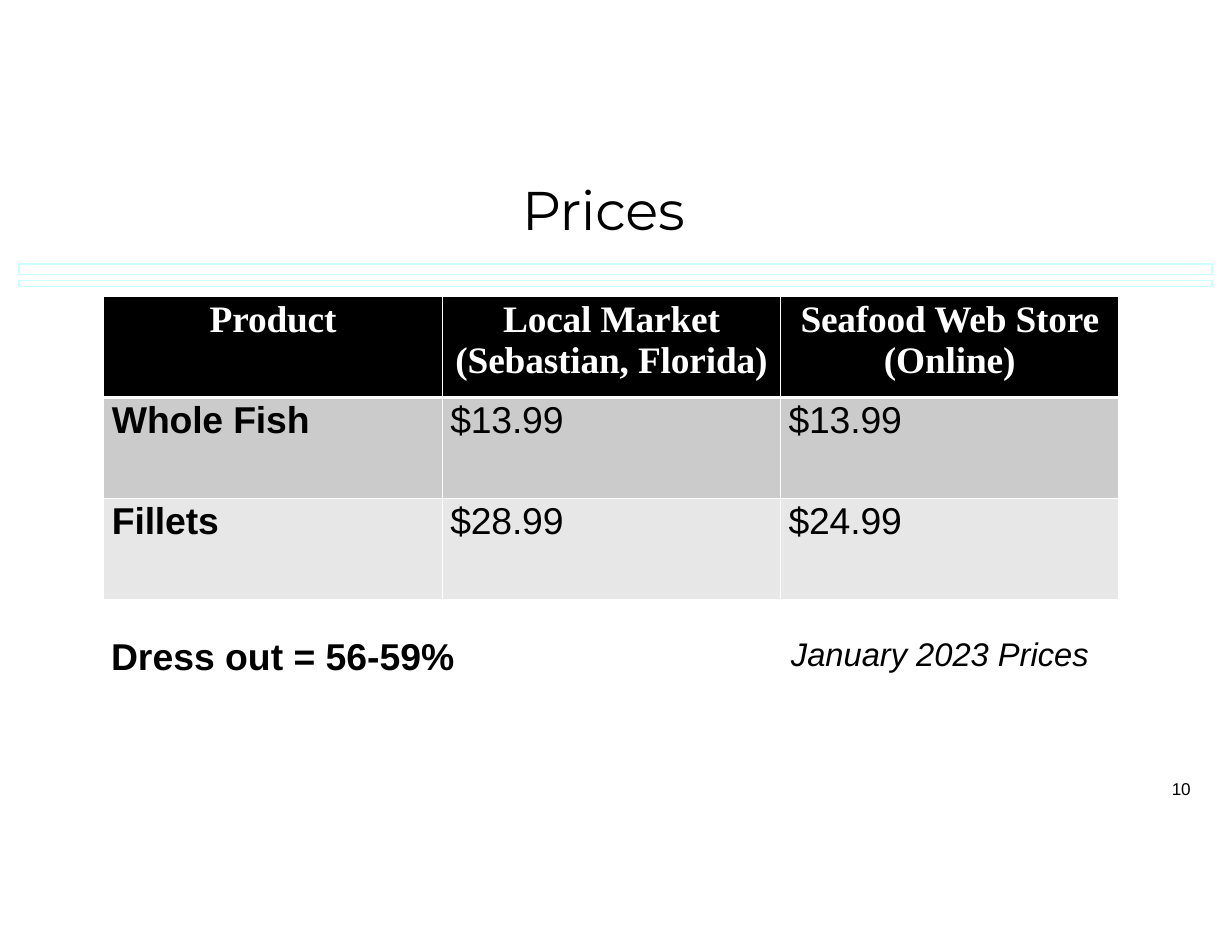
from dataclasses import dataclass

from lxml import etree
from pptx import Presentation
from pptx.dml.color import RGBColor
from pptx.enum.shapes import MSO_SHAPE
from pptx.enum.text import MSO_ANCHOR, MSO_AUTO_SIZE, PP_ALIGN
from pptx.oxml.ns import qn
from pptx.util import Pt

PX = 914400 // 112
RECT = MSO_SHAPE.RECTANGLE
TOP = MSO_ANCHOR.TOP
LEFT, CENTER = PP_ALIGN.LEFT, PP_ALIGN.CENTER
NO_FIT = MSO_AUTO_SIZE.NONE


@dataclass(frozen=True)
class Theme:
    ink: str = "000000"
    paper: str = "FFFFFF"
    rule: str = "CCFFFF"
    bands: tuple = ("CBCBCB", "E7E7E7")
    title_font: str = "Montserrat"
    head_font: str = "Times New Roman"
    body_font: str = "Arial"
    title_size: int = 35
    body_size: int = 24
    note_size: int = 21
    number_size: int = 11


T = Theme()
HEADERS = ["Product", "Local Market (Sebastian, Florida)", "Seafood Web Store (Online)"]
ROWS = [
    ["Whole Fish", "$13.99", "$13.99"],
    ["Fillets", "$28.99", "$24.99"],
]


def px(n):
    return n * PX


def rgb(value):
    return RGBColor.from_string(value)


def add_run(p, text, font, size, color=T.ink, bold=False, italic=False, spacing=0):
    r = p.add_run()
    r.text = text
    r.font.name, r.font.size = font, Pt(size)
    r.font.bold, r.font.italic = bold, italic
    r.font.color.rgb = rgb(color)
    if spacing:
        r.font._element.set("spc", str(round(spacing * 100)))


def setup_frame(tf, left=0, top=0):
    tf.word_wrap = True
    tf.auto_size = NO_FIT
    tf.vertical_anchor = TOP
    tf.margin_left, tf.margin_top = px(left), px(top)
    tf.margin_right = tf.margin_bottom = 0


def add_rules(s, x, y, w):
    """Thick and thin outlined bands under the title."""
    for dy, h in ((0, 11), (17, 6)):
        sp = s.shapes.add_shape(RECT, px(x), px(y + dy), px(w), px(h))
        sp.shadow.inherit = False
        sp.fill.background()
        sp.line.color.rgb = rgb(T.rule)
        sp.line.width = Pt(0.67)


def add_title(s, x, y, w, h):
    sp = s.shapes.title
    sp.left, sp.top, sp.width, sp.height = px(x), px(y), px(w), px(h)
    setup_frame(sp.text_frame, left=484, top=44)
    p = sp.text_frame.paragraphs[0]
    p.alignment = LEFT
    p.line_spacing = 1.0
    add_run(p, "Prices", T.title_font, T.title_size, spacing=-0.1)


def add_text(s, x, y, w, h, text, size, left=1, top=1, **style):
    sp = s.shapes.add_textbox(px(x), px(y), px(w), px(h))
    setup_frame(sp.text_frame, left, top)
    p = sp.text_frame.paragraphs[0]
    add_run(p, text, T.body_font, size, **style)
    return p


def set_borders(cell, top, bottom):
    """Draw the four white edges; they must precede the cell fill."""
    tc_pr = cell._tc.get_or_add_tcPr()
    edges = (("a:lnL", 0.75), ("a:lnR", 0.75), ("a:lnT", top), ("a:lnB", bottom))
    for i, (tag, width) in enumerate(edges):
        ln = etree.Element(qn(tag), w=str(Pt(width)))
        fill = etree.SubElement(ln, qn("a:solidFill"))
        etree.SubElement(fill, qn("a:srgbClr"), val=T.paper)
        tc_pr.insert(i, ln)


def add_price_table(s, x, y, w, h):
    data = [HEADERS] + ROWS
    table = s.shapes.add_table(len(data), len(HEADERS), px(x), px(y), px(w), px(h)).table
    for column in table.columns:
        column.width = px(w) // len(HEADERS)
    for row in table.rows:
        row.height = px(h) // len(data)

    for i, values in enumerate(data):
        header = i == 0
        for j, text in enumerate(values):
            cell = table.cell(i, j)
            cell.margin_left = px(0 if header else 8)
            cell.margin_top = px(2)
            cell.margin_right = cell.margin_bottom = 0
            cell.vertical_anchor = TOP
            cell.fill.solid()
            cell.fill.fore_color.rgb = rgb(T.ink if header else T.bands[i - 1])
            set_borders(cell, 2.25 if i == 1 else 0.75, 2.25 if header else 0.75)
            p = cell.text_frame.paragraphs[0]
            p.alignment = CENTER if header else LEFT
            add_run(p, text, T.head_font if header else T.body_font, T.body_size,
                    color=T.paper if header else T.ink,
                    bold=header or j == 0, spacing=-0.1)


def main():
    prs = Presentation()
    prs.slide_width, prs.slide_height = px(1232), px(952)
    s = prs.slides.add_slide(prs.slide_layouts[5])

    add_rules(s, 19, 264, 1193)
    add_title(s, 38, 132, 1156, 131)
    add_price_table(s, 104, 297, 1015, 303)

    # Notes below the table
    add_text(s, 110, 632, 346, 48, "Dress out = 56-59%", T.body_size, bold=True)
    add_text(s, 790, 633, 306, 43, "January 2023 Prices", T.note_size, italic=True)

    # Page number
    p = add_text(s, 1168, 778, 30, 22, "10", T.number_size, left=4, top=0, spacing=-0.2)
    p.line_spacing = Pt(13.2)

    prs.save("out.pptx")


if __name__ == "__main__":
    main()
